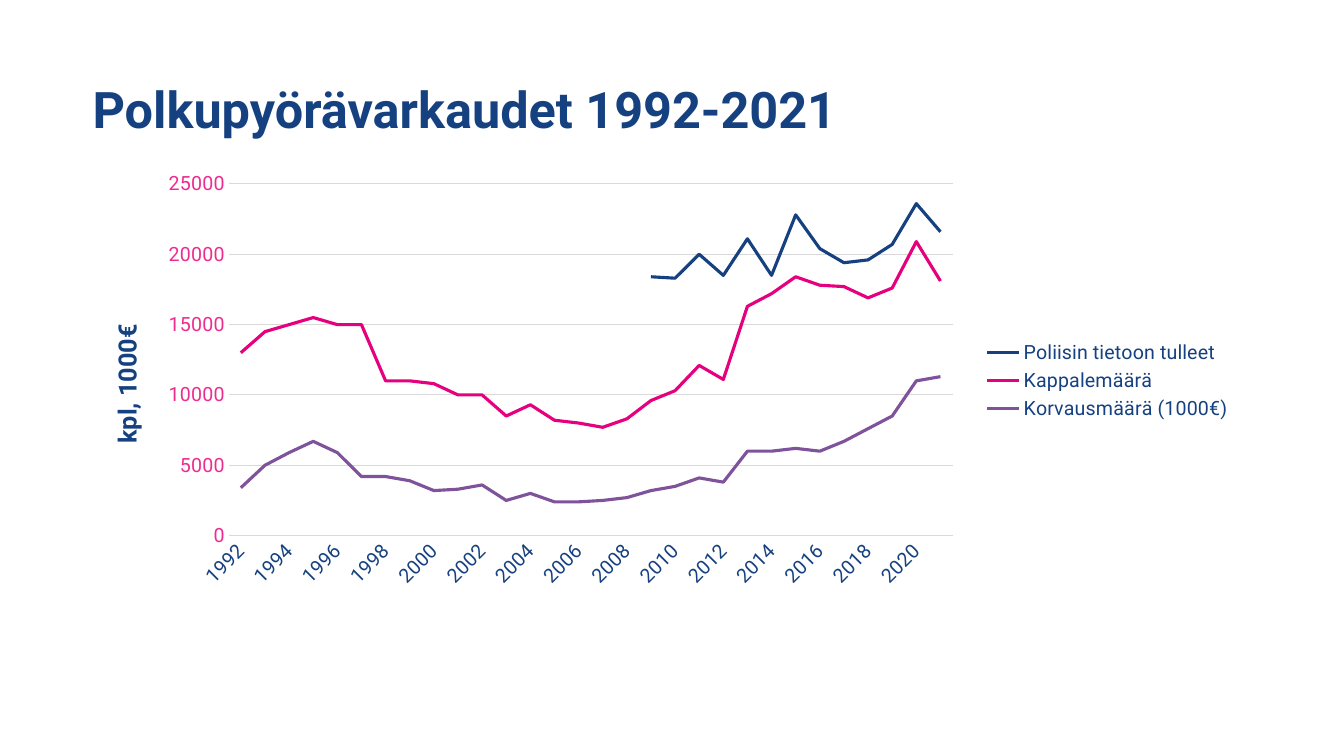
from dataclasses import dataclass

from lxml import etree
from pptx import Presentation
from pptx.chart.data import CategoryChartData
from pptx.dml.color import RGBColor
from pptx.enum.chart import XL_CHART_TYPE, XL_LEGEND_POSITION, XL_TICK_MARK
from pptx.enum.text import MSO_ANCHOR
from pptx.oxml.ns import qn
from pptx.util import Inches, Pt

LINE_CHART = XL_CHART_TYPE.LINE
LEGEND_RIGHT = XL_LEGEND_POSITION.RIGHT
NO_TICKS = XL_TICK_MARK.NONE
MIDDLE = MSO_ANCHOR.MIDDLE

SLIDE_WIDTH = Inches(13.33)
SLIDE_HEIGHT = Inches(7.5)
MARGIN = 0.0615
CONTENT_WIDTH = 0.863


@dataclass(frozen=True)
class Theme:
    font: str = "Roboto"
    navy: str = "164180"
    pink: str = "E6007E"
    axis_pink: str = "EE2C90"
    purple: str = "7F539C"
    grid: str = "D9D9D9"
    heading_size: float = 36
    axis_title_size: float = 18
    label_size: float = 14
    series_width: float = 2.25
    grid_width: float = 0.75


THEME = Theme()

YEARS = [str(year) for year in range(1992, 2022)]
POLICE_REPORTS = [18400, 18300, 20000, 18500, 21100, 18500, 22800,
                  20400, 19400, 19600, 20700, 23600, 21600]
CLAIM_COUNTS = [13000, 14500, 15000, 15500, 15000, 15000, 11000, 11000,
                10800, 10000, 10000, 8500, 9300, 8200, 8000, 7700, 8300,
                9600, 10300, 12100, 11100, 16300, 17200, 18400, 17800,
                17700, 16900, 17600, 20900, 18100]
COMPENSATION = [3400, 5000, 5900, 6700, 5900, 4200, 4200, 3900, 3200,
                3300, 3600, 2500, 3000, 2400, 2400, 2500, 2700, 3200,
                3500, 4100, 3800, 6000, 6000, 6200, 6000, 6700, 7600,
                8500, 11000, 11300]
THEFT_SERIES = [
    ("Poliisin tietoon tulleet",
     [None] * (len(YEARS) - len(POLICE_REPORTS)) + POLICE_REPORTS, THEME.navy),
    ("Kappalemäärä", CLAIM_COUNTS, THEME.pink),
    ("Korvausmäärä (1000€)", COMPENSATION, THEME.purple),
]


def area(left, top, width, height):
    return (round(left * SLIDE_WIDTH), round(top * SLIDE_HEIGHT),
            round(width * SLIDE_WIDTH), round(height * SLIDE_HEIGHT))


def style_font(font, size, color, bold=False):
    font.name = THEME.font
    font.size = Pt(size)
    font.bold = bold
    font.color.rgb = RGBColor.from_string(color)


def style_line(line, color, width):
    line.color.rgb = RGBColor.from_string(color)
    line.width = Pt(width)


def write_text(frame, text, size, color, bold=False, line_spacing=None):
    paragraph = frame.paragraphs[0]
    paragraph.line_spacing = line_spacing
    run = paragraph.add_run()
    run.text = text
    style_font(run.font, size, color, bold)


def add_heading(slide, text):
    frame = slide.shapes.add_textbox(
        *area(MARGIN, 0.052, CONTENT_WIDTH, 0.193)).text_frame
    frame.word_wrap = True
    frame.vertical_anchor = MIDDLE
    write_text(frame, text, THEME.heading_size, THEME.navy,
               bold=True, line_spacing=0.9)


def place_part(parent, index, **shares):
    for old_layout in parent.findall(qn("c:layout")):
        parent.remove(old_layout)
    layout = etree.Element(qn("c:layout"))
    manual = etree.SubElement(layout, qn("c:manualLayout"))
    for tag, value in shares.items():
        etree.SubElement(manual, qn(f"c:{tag}")).set("val", str(value))
    parent.insert(index, layout)


def style_year_axis(axis):
    axis.major_tick_mark = NO_TICKS
    style_line(axis.format.line, THEME.grid, THEME.grid_width)
    style_font(axis.tick_labels.font, THEME.label_size, THEME.navy)
    axis_xml = axis._element
    axis_xml.find(qn("c:txPr")).find(qn("a:bodyPr")).set("rot", "-2700000")
    label_step = etree.Element(qn("c:tickLblSkip"))
    label_step.set("val", "2")
    axis_xml.find(qn("c:noMultiLvlLbl")).addprevious(label_step)


def style_value_axis(axis, title):
    axis.minimum_scale = 0
    axis.maximum_scale = 25000
    axis.major_unit = 5000
    axis.major_tick_mark = NO_TICKS
    axis.format.line.fill.background()
    style_line(axis.major_gridlines.format.line, THEME.grid, THEME.grid_width)
    style_font(axis.tick_labels.font, THEME.label_size, THEME.axis_pink)
    write_text(axis.axis_title.text_frame, title, THEME.axis_title_size,
               THEME.navy, bold=True)
    place_part(axis.axis_title._element, 1,
               xMode="edge", yMode="edge", x=0.02, y=0.36)


def add_theft_chart(slide):
    data = CategoryChartData(number_format="General")
    data.categories = YEARS
    for name, values, _ in THEFT_SERIES:
        data.add_series(name, values)
    chart = slide.shapes.add_chart(
        LINE_CHART, *area(MARGIN, 0.217, CONTENT_WIDTH, 0.573), data).chart
    style_font(chart.font, THEME.label_size, THEME.navy)
    chart.has_title = False
    chart.has_legend = True
    chart.legend.position = LEGEND_RIGHT
    chart.legend.include_in_layout = False
    style_font(chart.legend.font, THEME.label_size, THEME.navy)

    style_year_axis(chart.category_axis)
    style_value_axis(chart.value_axis, "kpl, 1000€")
    plot = chart.plots[0]
    plot.vary_by_categories = False
    for series, (_, _, color) in zip(plot.series, THEFT_SERIES):
        series.smooth = False
        style_line(series.format.line, color, THEME.series_width)
    place_part(plot._element.getparent(), 0, layoutTarget="inner",
               xMode="edge", yMode="edge", x=0.126, y=0.046, w=0.624, h=0.812)


def main():
    presentation = Presentation()
    presentation.slide_width = SLIDE_WIDTH
    presentation.slide_height = SLIDE_HEIGHT
    slide = presentation.slides.add_slide(presentation.slide_layouts[6])
    add_heading(slide, "Polkupyörävarkaudet 1992-2021")
    add_theft_chart(slide)
    presentation.save("out.pptx")


if __name__ == "__main__":
    main()
